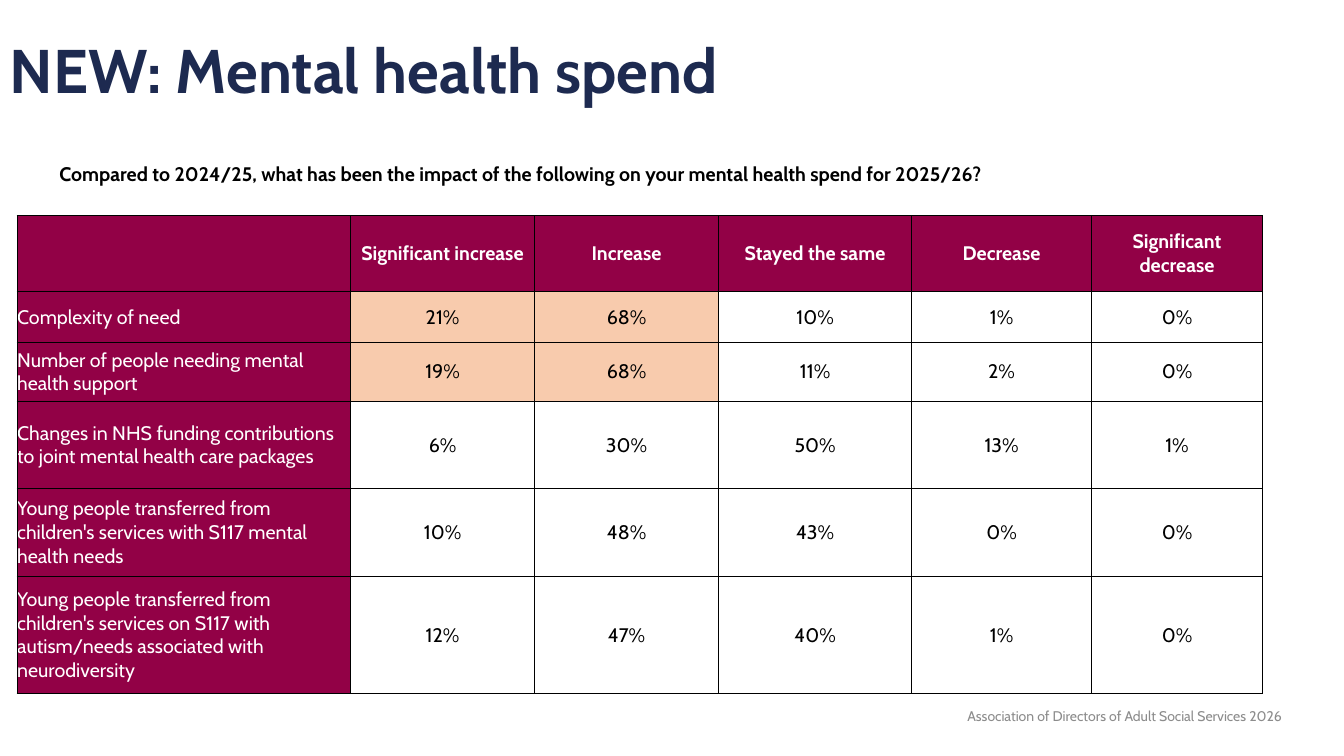
from lxml.etree import SubElement
from pptx import Presentation
from pptx.dml.color import RGBColor
from pptx.enum.text import MSO_ANCHOR as Anchor, PP_ALIGN as Align
from pptx.oxml.ns import qn
from pptx.util import Pt

# Content
TITLE = "NEW: Mental health spend"
QUESTION = ("Compared to 2024/25, what has been the impact of the following "
            "on your mental health spend for 2025/26?")
FOOTER = "Association of Directors of Adult Social Services 2026"
ROWS = [
    ("", "Significant increase", "Increase", "Stayed the same", "Decrease",
     "Significant decrease"),
    ("Complexity of need", "21%", "68%", "10%", "1%", "0%"),
    ("Number of people needing mental health support",
     "19%", "68%", "11%", "2%", "0%"),
    ("Changes in NHS funding contributions to joint mental health care packages",
     "6%", "30%", "50%", "13%", "1%"),
    ("Young people transferred from children's services with S117 mental "
     "health needs", "10%", "48%", "43%", "0%", "0%"),
    ("Young people transferred from children's services on S117 with "
     "autism/needs associated with neurodiversity",
     "12%", "47%", "40%", "1%", "0%"),
]
HIGHLIGHTED = {(1, 1), (1, 2), (2, 1), (2, 2)}

# Layout in px, 100 px to the inch
PX = 9144
SLIDE_SIZE = (1333, 750)
TITLE_BOX = (0, 0, 1150, 145)
QUESTION_BOX = (49, 156, 1096, 34)
FOOTER_BOX = (831, 690, 450, 40)
TABLE_CORNER = (17, 214)
COLUMN_WIDTHS = (331, 182, 183, 191, 179, 169)
ROW_HEIGHTS = (75, 51, 58, 87, 87, 116)

# Style
FONT = "Cabin"
NAVY = RGBColor(0x1D, 0x2A, 0x50)
GREY = RGBColor(0x8C, 0x8C, 0x8C)
BLACK = RGBColor(0x00, 0x00, 0x00)
WHITE = RGBColor(0xFF, 0xFF, 0xFF)
MAROON = RGBColor(0x92, 0x01, 0x46)
PEACH = RGBColor(0xF8, 0xCB, 0xAD)


def write(paragraph, text, color, size=14, bold=False, align=Align.LEFT):
    paragraph.text = text
    paragraph.alignment = align
    paragraph.font.color.rgb = color
    for name, value in {"name": FONT, "size": Pt(size), "bold": bold}.items():
        setattr(paragraph.font, name, value)
        for run in paragraph.runs:
            setattr(run.font, name, value)
    for run in paragraph.runs:
        run.font.color.rgb = color


def add_text(slide, box, text, anchor=Anchor.MIDDLE, **style):
    frame = slide.shapes.add_textbox(*(v * PX for v in box)).text_frame
    frame.word_wrap = True
    frame.vertical_anchor = anchor
    write(frame.paragraphs[0], text, **style)
    return frame.paragraphs[0]


def add_borders(cell):
    properties = cell._tc.get_or_add_tcPr()
    for index, side in enumerate(("a:lnL", "a:lnR", "a:lnT", "a:lnB")):
        line = SubElement(properties, qn(side), w=str(Pt(1)))
        fill = SubElement(line, qn("a:solidFill"))
        SubElement(fill, qn("a:srgbClr"), val=str(BLACK))
        properties.insert(index, line)


def add_spend_table(slide):
    size = (sum(COLUMN_WIDTHS), sum(ROW_HEIGHTS))
    table = slide.shapes.add_table(
        len(ROWS), len(COLUMN_WIDTHS),
        *(v * PX for v in TABLE_CORNER + size)).table
    for column, width in zip(table.columns, COLUMN_WIDTHS):
        column.width = width * PX
    for row, height in zip(table.rows, ROW_HEIGHTS):
        row.height = height * PX

    for r, row in enumerate(ROWS):
        for c, text in enumerate(row):
            cell = table.cell(r, c)
            is_header, is_label = r == 0, c == 0
            cell.vertical_anchor = Anchor.MIDDLE
            if is_label:
                for side in ("left", "right", "top", "bottom"):
                    setattr(cell, f"margin_{side}", 0)
            # Headings and labels are maroon, the largest rises peach
            if is_header or is_label:
                cell.fill.solid()
                cell.fill.fore_color.rgb = MAROON
            elif (r, c) in HIGHLIGHTED:
                cell.fill.solid()
                cell.fill.fore_color.rgb = PEACH
            else:
                cell.fill.background()
            write(cell.text_frame.paragraphs[0], text,
                  color=WHITE if is_header or is_label else BLACK,
                  bold=is_header,
                  align=Align.LEFT if is_label else Align.CENTER)
            add_borders(cell)


def main():
    presentation = Presentation()
    presentation.slide_width, presentation.slide_height = (
        v * PX for v in SLIDE_SIZE)
    slide = presentation.slides.add_slide(presentation.slide_layouts[6])

    title = add_text(slide, TITLE_BOX, TITLE, color=NAVY, size=44, bold=True)
    title.line_spacing = 0.9
    add_text(slide, FOOTER_BOX, FOOTER, color=GREY, size=10, align=Align.RIGHT)
    add_spend_table(slide)
    add_text(slide, QUESTION_BOX, QUESTION, anchor=Anchor.TOP, color=BLACK,
             bold=True)
    presentation.save("out.pptx")


if __name__ == "__main__":
    main()
